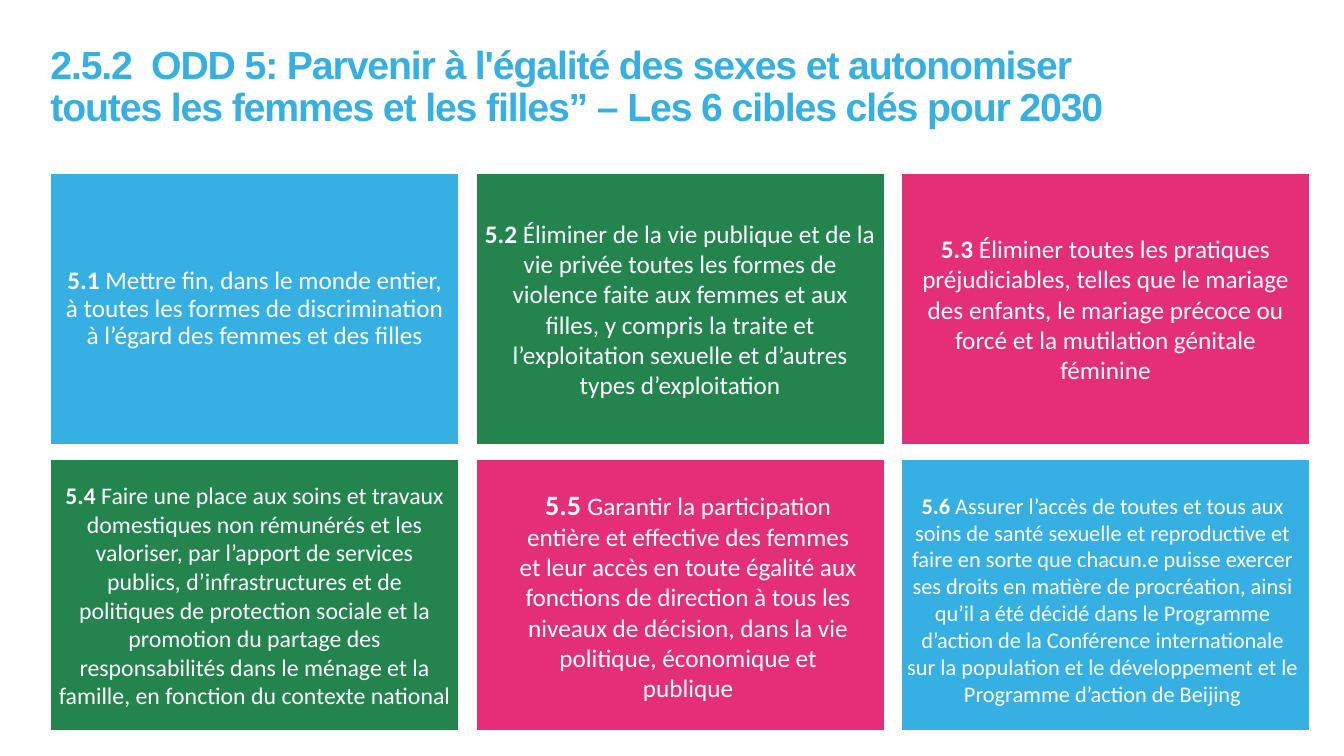
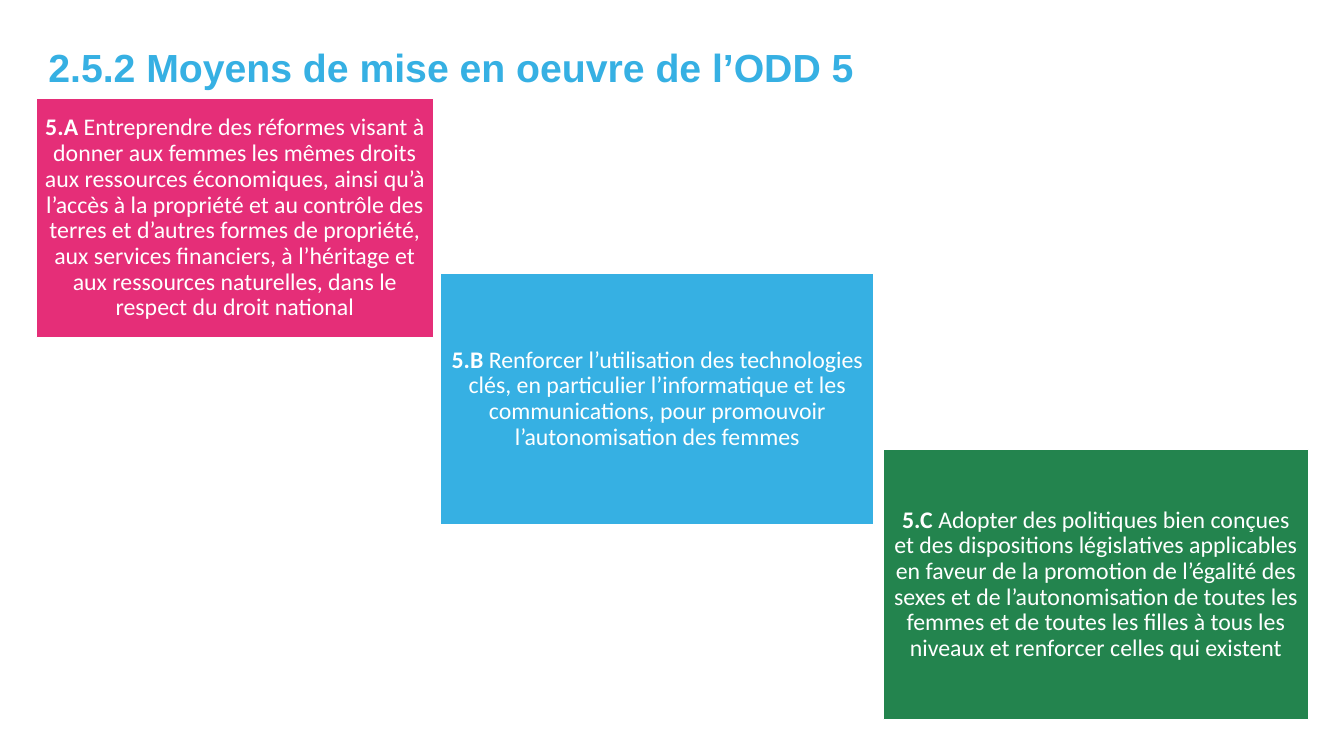
from pptx import Presentation
from pptx.dml.color import RGBColor
from pptx.enum.shapes import MSO_SHAPE
from pptx.enum.text import MSO_ANCHOR, MSO_AUTO_SIZE, PP_ALIGN
from pptx.util import Inches, Pt

BLUE = RGBColor(0x36, 0xB0, 0xE3)
GREEN = RGBColor(0x23, 0x84, 0x4E)
PINK = RGBColor(0xE5, 0x2E, 0x78)
WHITE = RGBColor(0xFF, 0xFF, 0xFF)
RECTANGLE = MSO_SHAPE.RECTANGLE
TOP, MIDDLE = MSO_ANCHOR.TOP, MSO_ANCHOR.MIDDLE
LEFT, CENTER = PP_ALIGN.LEFT, PP_ALIGN.CENTER
NO_AUTOFIT = MSO_AUTO_SIZE.NONE
TITLE_ONLY = 5

prs = Presentation()
prs.slide_width = Inches(13.33)
prs.slide_height = Inches(7.5)


def add_titled_slide(text, left, top, width, height, inset=0):
    slide = prs.slides.add_slide(prs.slide_layouts[TITLE_ONLY])
    title = slide.shapes.title
    title.left, title.top = Inches(left), Inches(top)
    title.width, title.height = Inches(width), Inches(height)
    frame = title.text_frame
    frame.text = text
    frame.auto_size = NO_AUTOFIT
    frame.vertical_anchor = TOP
    frame.margin_left = frame.margin_right = 0
    frame.margin_top = frame.margin_bottom = Inches(inset)
    paragraph = frame.paragraphs[0]
    paragraph.alignment = LEFT
    paragraph.line_spacing = 0.9
    paragraph.font.name = "Arial"
    paragraph.font.size = Pt(28)
    paragraph.font.bold = True
    paragraph.font.color.rgb = BLUE
    return slide


def add_target_card(slide, box, color, number, text, size, spacing, insets):
    """Add a coloured card; insets run left, top, right, bottom in inches."""
    card = slide.shapes.add_shape(RECTANGLE, *(Inches(value) for value in box))
    card.shadow.inherit = False
    card.fill.solid()
    card.fill.fore_color.rgb = color
    card.line.color.rgb = WHITE
    card.line.width = Pt(1)
    frame = card.text_frame
    frame.word_wrap = True
    frame.vertical_anchor = MIDDLE
    (frame.margin_left, frame.margin_top,
     frame.margin_right, frame.margin_bottom) = (Inches(value) for value in insets)
    paragraph = frame.paragraphs[0]
    paragraph.alignment = CENTER
    paragraph.line_spacing = spacing
    paragraph.font.name = "Calibri"
    paragraph.font.size = Pt(size)
    paragraph.font.color.rgb = WHITE
    label = paragraph.add_run()
    label.text = number + " "
    label.font.bold = True
    paragraph.add_run().text = text
    return label


# Slide 1: the six targets in a grid
targets_slide = add_titled_slide(
    "2.5.2 \tODD 5: Parvenir à l'égalité des sexes et autonomiser\v"
    "toutes les femmes et les filles” – Les 6 cibles clés pour 2030",
    0.5, 0.4, 11.84, 0.95, inset=0.05)
for run in targets_slide.shapes.title.text_frame.paragraphs[0].runs:
    run._r.get_or_add_rPr().set("spc", "-80")

EVEN = (0.08, 0.08, 0.08, 0.08)
targets = [
    (BLUE, "5.1", "Mettre fin, dans le monde entier, à toutes les formes de "
     "discrimination à l’égard des femmes et des filles", 18, 0.9, EVEN),
    (GREEN, "5.2", "Éliminer de la vie publique et de la vie privée toutes les "
     "formes de violence faite aux femmes et aux filles, y compris la traite et "
     "l’exploitation sexuelle et d’autres types d’exploitation", 18, 1.0, EVEN),
    (PINK, "5.3", "Éliminer toutes les pratiques préjudiciables, telles que le "
     "mariage des enfants, le mariage précoce ou forcé et la mutilation génitale "
     "féminine", 18, 1.0, EVEN),
    (GREEN, "5.4", "Faire une place aux soins et travaux domestiques non rémunérés "
     "et les valoriser, par l’apport de services publics, d’infrastructures et de "
     "politiques de protection sociale et la promotion du partage des "
     "responsabilités dans le ménage et la famille, en fonction du contexte "
     "national", 17, 1.0, EVEN),
    (PINK, "5.5", "Garantir la participation entière et effective des femmes et "
     "leur accès en toute égalité aux fonctions de direction à tous les niveaux de "
     "décision, dans la vie politique, économique et publique",
     18, 1.0, (0.41, 0.08, 0.25, 0.08)),
    (BLUE, "5.6", "Assurer l’accès de toutes et tous aux soins de santé sexuelle et "
     "reproductive et faire en sorte que chacun.e puisse exercer ses droits en "
     "matière de procréation, ainsi qu’il a été décidé dans le Programme d’action "
     "de la Conférence internationale sur la population et le développement et le "
     "Programme d’action de Beijing", 16, 1.0, (0.05, 0.16, 0.11, 0.08)),
]
CARD_WIDTH, CARD_HEIGHT = 4.05, 2.69
COLUMN_STEP, ROW_STEP = 4.22, 2.84
for index, (color, number, text, size, spacing, insets) in enumerate(targets):
    row, column = divmod(index, 3)
    box = (0.5 + column * COLUMN_STEP, 1.72 + row * ROW_STEP, CARD_WIDTH, CARD_HEIGHT)
    label = add_target_card(targets_slide, box, color, number, text, size, spacing, insets)
    if number == "5.5":
        label.font.size = Pt(20)

# Slide 2: the means of implementation as descending steps
means_slide = add_titled_slide("2.5.2 Moyens de mise en oeuvre de l’ODD 5",
                               0.48, 0.48, 11.34, 0.43)
means = [
    ((0.36, 0.98, 3.94, 2.37), PINK, "5.A",
     "Entreprendre des réformes visant à donner aux femmes les mêmes droits aux "
     "ressources économiques, ainsi qu’à l’accès à la propriété et au contrôle des "
     "terres et d’autres formes de propriété, aux services financiers, à l’héritage "
     "et aux ressources naturelles, dans le respect du droit national"),
    ((4.37, 2.71, 4.3, 2.5), BLUE, "5.B",
     "Renforcer l’utilisation des technologies clés, en particulier l’informatique "
     "et les communications, pour promouvoir l’autonomisation des femmes"),
    ((8.76, 4.46, 4.22, 2.68), GREEN, "5.C",
     "Adopter des politiques bien conçues et des dispositions législatives "
     "applicables en faveur de la promotion de l’égalité des sexes et de "
     "l’autonomisation de toutes les femmes et de toutes les filles à tous les "
     "niveaux et renforcer celles qui existent"),
]
for box, color, number, text in means:
    add_target_card(means_slide, box, color, number, text, 17, 0.9, (0.07,) * 4)

prs.save("out.pptx")
